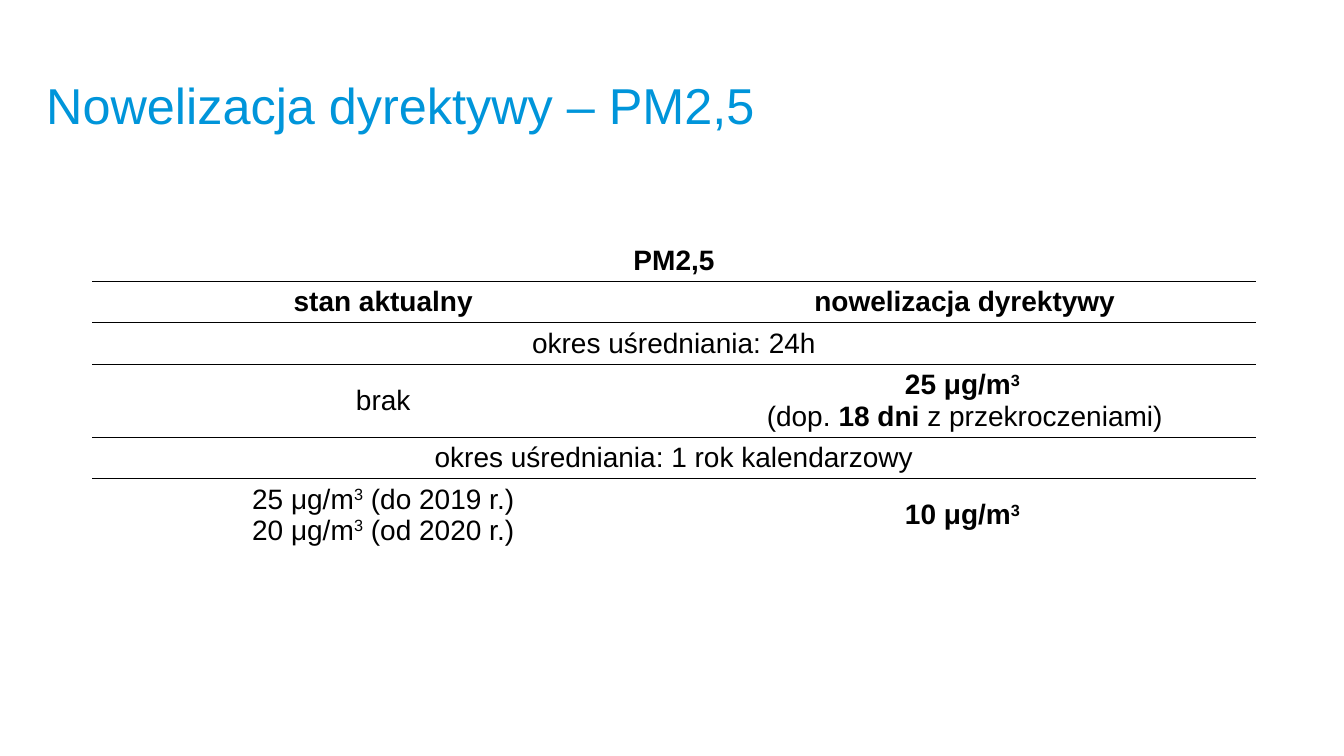
from lxml import etree
from pptx import Presentation
from pptx.dml.color import RGBColor
from pptx.enum import text
from pptx.oxml import ns
from pptx.util import Cm, Pt

FONT = "Arial"
ROWS = [
    ["*PM2,5*"],
    ["*stan aktualny*", "*nowelizacja dyrektywy*"],
    ["okres uśredniania: 24h"],
    ["brak", "*25 μg/m^3 ^*\n(dop. *18 dni* z przekroczeniami)"],
    ["okres uśredniania: 1 rok kalendarzowy"],
    ["25 μg/m^3^ (do 2019 r.)\n20 μg/m^3^ (od 2020 r.)", "*10 μg/m^3 ^*"],
]


def tint(code):
    return RGBColor.from_string(code)


def write(frame, words, size=20, color="000000", align="CENTER", space=1.0):
    frame.word_wrap = True
    for n, line in enumerate(words.split("\n")):
        para = frame.add_paragraph() if n else frame.paragraphs[0]
        para.alignment = text.PP_ALIGN[align]
        para.line_spacing = space
        for b, part in enumerate(line.split("*")):
            for s, piece in enumerate(part.split("^")):
                if not piece:
                    continue
                run = para.add_run()
                run.text = piece
                font = run.font
                font.name, font.size, font.bold = FONT, Pt(size), b % 2 == 1
                font.color.rgb = tint(color)
                if s % 2:
                    font._element.set("baseline", "30000")


def border(cell, top, bottom):
    props = cell._tc.get_or_add_tcPr()
    sides = {"lnL": False, "lnR": False, "lnT": top, "lnB": bottom}
    for n, (side, shown) in enumerate(sides.items()):
        line = etree.Element(ns.qn("a:" + side), w=str(Pt(1)))
        if shown:
            fill = etree.SubElement(line, ns.qn("a:solidFill"))
            etree.SubElement(fill, ns.qn("a:srgbClr"), val="000000")
        else:
            etree.SubElement(line, ns.qn("a:noFill"))
        props.insert(n, line)


def title(slide, words, left, top, width, height):
    shape = slide.shapes.title
    shape.left, shape.top, shape.width, shape.height = left, top, width, height
    frame = shape.text_frame
    frame.auto_size = text.MSO_AUTO_SIZE.NONE
    frame.vertical_anchor = text.MSO_ANCHOR.MIDDLE
    write(frame, words, size=36, color="0095DA", align="LEFT", space=0.9)


def limits(slide, rows, left, top, width, height):
    table = slide.shapes.add_table(len(rows), 2, left, top, width, height).table
    table.first_row = table.horz_banding = False
    for r, row in enumerate(rows):
        tall = any("\n" in words for words in row)
        table.rows[r].height = Cm(1.84 if tall else 1.04)
        for cell in table.rows[r].cells:
            cell.fill.background()
            cell.vertical_anchor = text.MSO_ANCHOR.MIDDLE
            border(cell, r > 0, r < len(rows) - 1)
        if len(row) == 1:
            table.cell(r, 0).merge(table.cell(r, 1))
        for c, words in enumerate(row):
            write(table.cell(r, c).text_frame, words)


def main():
    deck = Presentation()
    deck.slide_width, deck.slide_height = Cm(33.87), Cm(19.05)
    slide = deck.slides.add_slide(deck.slide_layouts[5])
    title(slide, "Nowelizacja dyrektywy – PM2,5", Cm(0.91), Cm(0), Cm(23), Cm(5.46))
    limits(slide, ROWS, Cm(2.33), Cm(6.05), Cm(29.31), Cm(7.84))
    deck.save("out.pptx")


if __name__ == "__main__":
    main()
